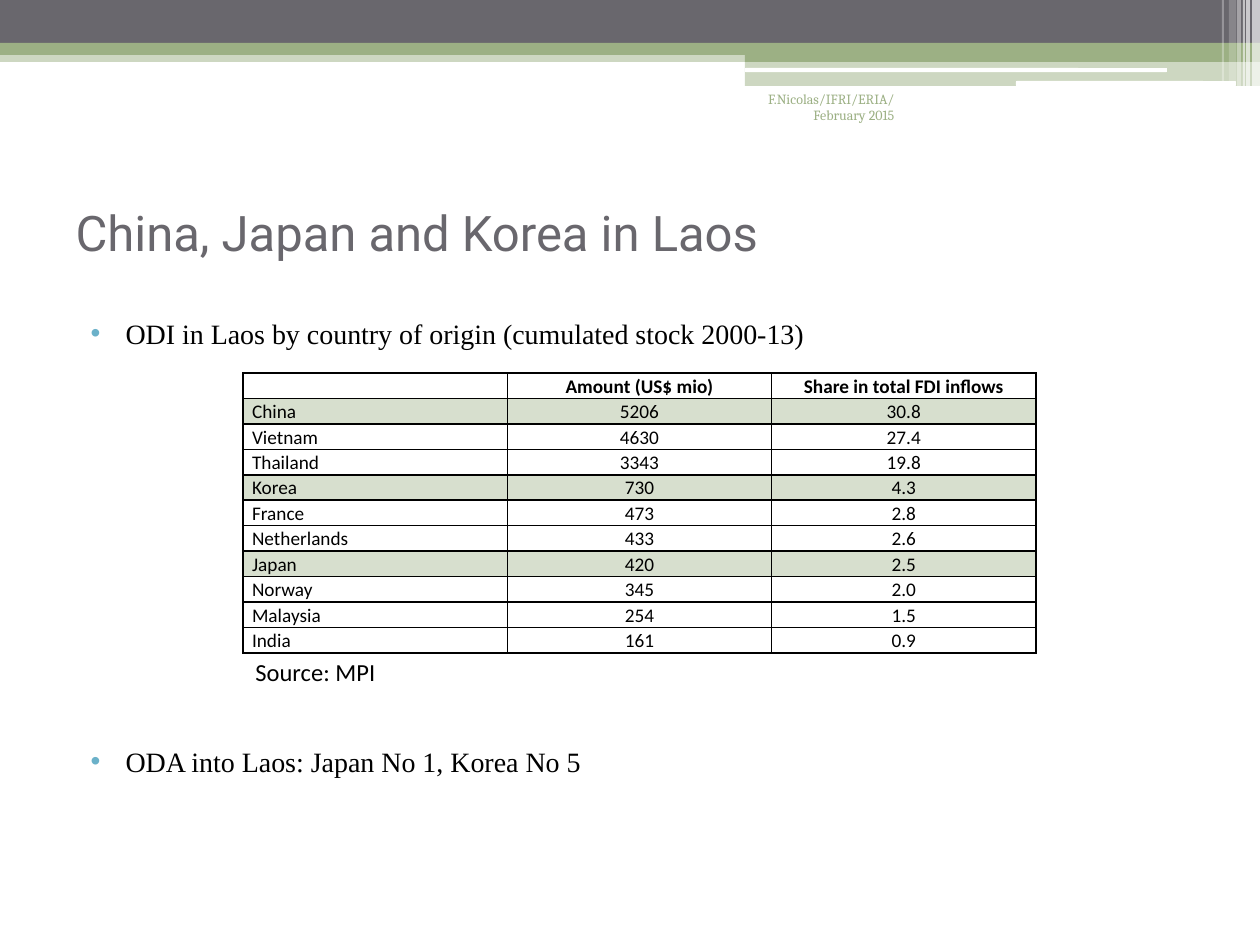
import pptx
import pptx.util
import pptx.dml.color
import pptx.enum.shapes
import pptx.enum.text
import pptx.oxml.ns
import lxml.etree

TITLE = "China, Japan and Korea in Laos"
POINTS = [
    ("ODI in Laos by country of origin (cumulated stock 2000-13)", 3),
    ("ODA into Laos: Japan No 1, Korea No 5", 225.5),
]
FOOTER = "F.Nicolas/IFRI/ERIA/ February 2015"
SOURCE = "Source: MPI"
ROWS = [
    ("", "Amount (US$ mio)", "Share in total FDI inflows"),
    ("China", "5206", "30.8"),
    ("Vietnam", "4630", "27.4"),
    ("Thailand", "3343", "19.8"),
    ("Korea", "730", "4.3"),
    ("France", "473", "2.8"),
    ("Netherlands", "433", "2.6"),
    ("Japan", "420", "2.5"),
    ("Norway", "345", "2.0"),
    ("Malaysia", "254", "1.5"),
    ("India", "161", "0.9"),
]
HIGHLIGHTED = {"China", "Korea", "Japan"}

GREY, GREEN, PALE, BLUE = "69676D", "9CB084", "D7DFCE", "6BB1C9"
WHITE, BLACK = "FFFFFF", "000000"
BANDS = [
    (0, 50, 1260, 12, GREEN, 50),
    (0, 0, 1260, 43, GREY, 100),
    (0, 43, 1260, 12, GREEN, 100),
    (745, 50, 515, 12, GREEN, 100),
    (745, 62, 515, 24, GREEN, 50),
]
PILLS = [(745, 68, 422, 4, WHITE, 100), (1016, 81, 220, 5, WHITE, 100)]
STRIPES = [
    (1252, 0, 8, 86, WHITE, 65),
    (1246, 0, 4, 86, WHITE, 65),
    (1243, 0, 2, 86, WHITE, 60),
    (1237, 0, 4, 86, WHITE, 40),
    (1229, 0, 7, 81, WHITE, 20),
    (1222, 0, 2, 81, WHITE, 30),
]
TABLE = (243, 373, 793, 280)
ALIGN = pptx.enum.text.PP_ALIGN
ANCHOR = pptx.enum.text.MSO_ANCHOR
SHAPE = pptx.enum.shapes.MSO_SHAPE


def px(value):
    return round(value * 914400 / 126)


def color(code):
    return pptx.dml.color.RGBColor.from_string(code)


def add_xml(parent, tag, **attributes):
    return lxml.etree.SubElement(parent, pptx.oxml.ns.qn(tag), attributes)


def write(para, text, size=16, font="Calibri", ink=BLACK, bold=False,
          align=ALIGN.LEFT, before=0, spacing=1.0):
    para.alignment = align
    para.space_before = pptx.util.Pt(before)
    para.line_spacing = spacing
    if not text:
        add_xml(para._p, "a:endParaRPr", sz=str(size * 100))
        return
    span = para.add_run()
    span.text = text
    span.font.size = pptx.util.Pt(size)
    span.font.name = font
    span.font.bold = bold
    span.font.color.rgb = color(ink)


def place(box, left, top, width, height):
    box.left, box.top = px(left), px(top)
    box.width, box.height = px(width), px(height)


def add_bars(page, kind, bars):
    for left, top, width, height, paint, opacity in bars:
        bar = page.shapes.add_shape(kind, px(left), px(top), px(width), px(height))
        bar.shadow.inherit = False
        bar.fill.solid()
        bar.fill.fore_color.rgb = color(paint)
        bar.line.fill.background()
        if opacity < 100:
            tint = bar.fill._xPr.find(".//" + pptx.oxml.ns.qn("a:srgbClr"))
            add_xml(tint, "a:alpha", val=str(opacity * 1000))


def add_note(page, area, text, **style):
    box = page.shapes.add_textbox(*map(px, area))
    box.text_frame.word_wrap = True
    write(box.text_frame.paragraphs[0], text, **style)


def add_bullet(para):
    properties = para._p.get_or_add_pPr()
    properties.set("marL", str(px(50)))
    properties.set("indent", str(px(-35)))
    add_xml(add_xml(properties, "a:buClr"), "a:srgbClr", val=BLUE)
    add_xml(properties, "a:buFont", typeface="Arial")
    add_xml(properties, "a:buChar", char="•")


def fill_cell(cell, text, paint, **style):
    cell.margin_left = cell.margin_right = px(9)
    cell.margin_top = cell.margin_bottom = 0
    write(cell.text_frame.paragraphs[0], text, size=11, spacing=1.07, **style)
    properties = cell._tc.get_or_add_tcPr()
    for side in ("a:lnL", "a:lnR", "a:lnT", "a:lnB"):
        border = add_xml(properties, side, w="12700")
        add_xml(add_xml(border, "a:solidFill"), "a:srgbClr", val=BLACK)
    if paint:
        cell.fill.solid()
        cell.fill.fore_color.rgb = color(paint)
    else:
        cell.fill.background()


def add_investment_table(page):
    frame = page.shapes.add_table(len(ROWS), len(ROWS[0]), *map(px, TABLE))
    table = frame.table
    table.horz_banding = False
    for column in table.columns:
        column.width = px(TABLE[2] / len(ROWS[0]))
    for r, row in enumerate(ROWS):
        table.rows[r].height = px(TABLE[3] / len(ROWS))
        paint = PALE if row[0] in HIGHLIGHTED else None
        for c, text in enumerate(row):
            fill_cell(table.cell(r, c), text, paint, bold=r == 0,
                      align=ALIGN.CENTER if c else ALIGN.LEFT)


def main():
    deck = pptx.Presentation()
    deck.slide_width, deck.slide_height = px(1260), px(945)
    page = deck.slides.add_slide(deck.slide_layouts[1])
    add_bars(page, SHAPE.RECTANGLE, BANDS)
    add_bars(page, SHAPE.ROUNDED_RECTANGLE, PILLS)
    add_bars(page, SHAPE.RECTANGLE, STRIPES)

    title, body = page.placeholders
    place(title, 63, 158, 1134, 147)
    place(body, 63, 310, 1134, 596)
    for box, anchor in ((title, ANCHOR.MIDDLE), (body, ANCHOR.TOP)):
        box.text_frame.auto_size = pptx.enum.text.MSO_AUTO_SIZE.NONE
        box.text_frame.vertical_anchor = anchor
    write(title.text_frame.paragraphs[0], TITLE, size=28, font="Roboto", ink=GREY)
    for index, (text, before) in enumerate(POINTS):
        frame = body.text_frame
        para = frame.add_paragraph() if index else frame.paragraphs[0]
        write(para, text, font="Times New Roman", before=before)
        add_bullet(para)

    add_note(page, (725, 84, 182, 63), FOOTER, size=8, font="Cambria",
             ink=GREEN, align=ALIGN.RIGHT)
    add_investment_table(page)
    add_note(page, (243, 651, 348, 43), SOURCE, size=14)
    deck.save("out.pptx")


if __name__ == "__main__":
    main()
